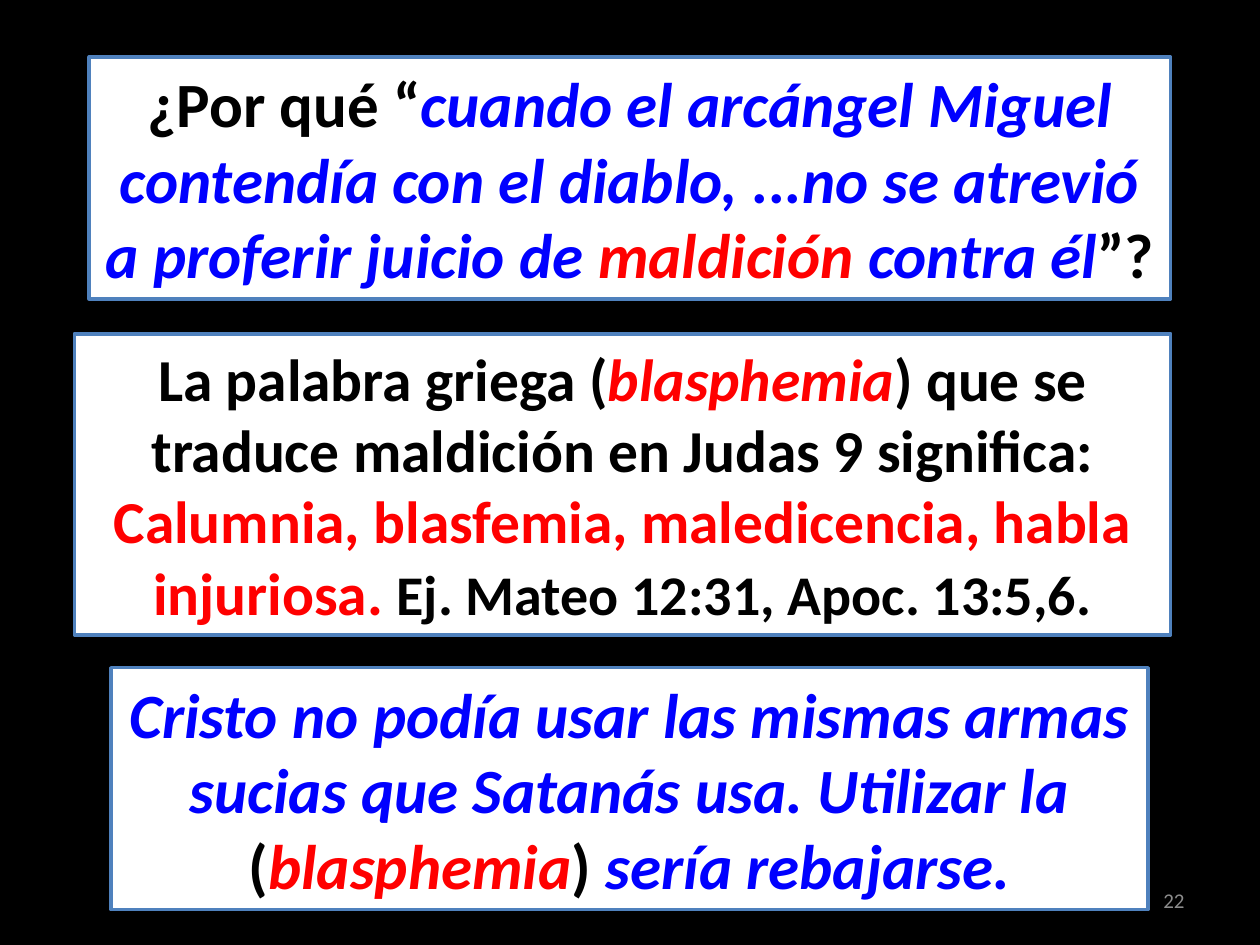
from lxml import etree
from pptx import Presentation
from pptx.dml.color import RGBColor
from pptx.enum.shapes import MSO_SHAPE
from pptx.enum.text import MSO_ANCHOR, MSO_AUTO_SIZE, PP_ALIGN
from pptx.oxml.ns import qn
from pptx.util import Cm, Pt

RECTANGLE = MSO_SHAPE.RECTANGLE
MIDDLE = MSO_ANCHOR.MIDDLE
GROW = MSO_AUTO_SIZE.SHAPE_TO_FIT_TEXT
CENTER, RIGHT = PP_ALIGN.CENTER, PP_ALIGN.RIGHT

FONT = "Calibri"
COLORS = {
    "black": "000000",
    "white": "FFFFFF",
    "blue": "0000FF",
    "red": "FF0000",
    "border": "4F81BD",
    "number": "8C8C8C",
}


def color(name):
    return RGBColor.from_string(COLORS[name])


def outline_text(run, color_name):
    """Give the letters a thin outline in their own colour."""
    properties = run.font._element
    line = etree.Element(qn("a:ln"), w=str(Pt(0.75)))
    fill = etree.SubElement(line, qn("a:solidFill"))
    etree.SubElement(fill, qn("a:srgbClr"), val=COLORS[color_name])
    properties.insert(0, line)


def add_run(paragraph, text, color_name, italic=False, size=None):
    run = paragraph.add_run()
    run.text = text
    run.font.color.rgb = color(color_name)
    run.font.italic = italic
    if size:
        run.font.size = Pt(size)
    outline_text(run, color_name)


def add_text_panel(slide, left, top, width, height, size, runs):
    """Add a white bordered panel; each run is (text, colour, italic, size)."""
    shape = slide.shapes.add_shape(
        RECTANGLE, Cm(left), Cm(top), Cm(width), Cm(height))
    shape.shadow.inherit = False
    shape.fill.solid()
    shape.fill.fore_color.rgb = color("white")
    shape.line.color.rgb = color("border")
    shape.line.width = Pt(2)
    frame = shape.text_frame
    frame.word_wrap = True
    frame.auto_size = GROW
    paragraph = frame.paragraphs[0]
    paragraph.alignment = CENTER
    paragraph.font.name = FONT
    paragraph.font.size = Pt(size)
    paragraph.font.bold = True
    for run in runs:
        add_run(paragraph, *run)


def add_slide_number(slide, number):
    box = slide.shapes.add_textbox(Cm(18.2), Cm(17.65), Cm(5.93), Cm(1.01))
    frame = box.text_frame
    frame.word_wrap = True
    frame.vertical_anchor = MIDDLE
    paragraph = frame.paragraphs[0]
    paragraph.text = number
    paragraph.alignment = RIGHT
    paragraph.font.name = FONT
    paragraph.font.size = Pt(12)
    paragraph.font.color.rgb = color("number")


def main():
    presentation = Presentation()
    presentation.slide_width = Cm(25.4)
    presentation.slide_height = Cm(19.05)
    slide = presentation.slides.add_slide(presentation.slide_layouts[6])
    slide.background.fill.solid()
    slide.background.fill.fore_color.rgb = color("black")

    add_slide_number(slide, "22")
    add_text_panel(slide, 1.8, 1.15, 21.8, 4.88, 36, [
        ("¿Por qué “", "black"),
        ("cuando el arcángel Miguel contendía con el diablo, "
         "...no se atrevió a proferir juicio de ", "blue", True),
        ("maldición ", "red", True),
        ("contra él", "blue", True),
        ("”? ", "black"),
    ])
    add_text_panel(slide, 1.5, 6.73, 22.1, 6.07, 34, [
        ("La palabra griega (", "black"),
        ("blasphemia", "red", True),
        (") que se traduce maldición en Judas 9 significa: ", "black"),
        ("Calumnia, blasfemia, maledicencia, habla injuriosa. ", "red"),
        ("Ej. Mateo 12:31, Apoc. 13:5,6.", "black", False, 32),
    ])
    add_text_panel(slide, 2.24, 13.46, 20.9, 4.88, 36, [
        ("Cristo no podía usar las mismas armas sucias que Satanás usa. "
         "Utilizar la ", "blue", True),
        ("(", "black"),
        ("blasphemia", "red", True),
        (") ", "black"),
        ("sería rebajarse.", "blue", True),
    ])
    presentation.save("out.pptx")


if __name__ == "__main__":
    main()
